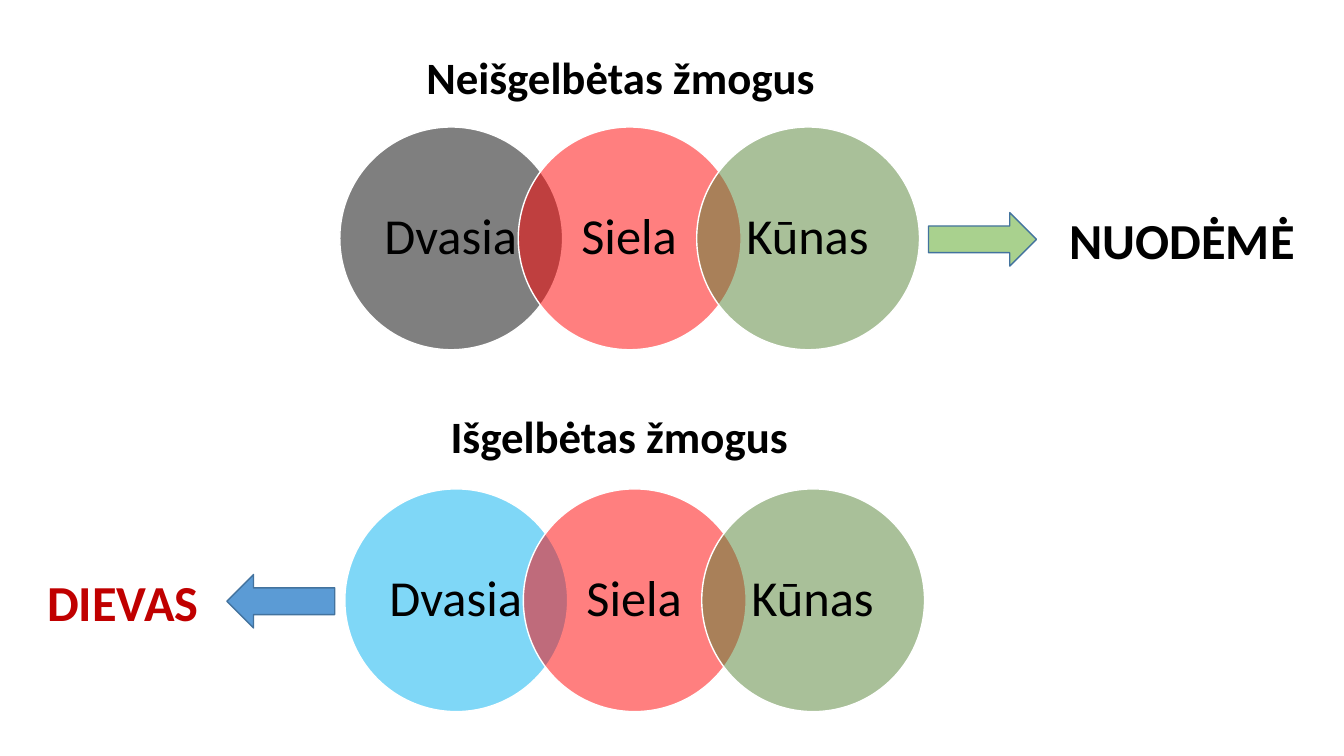
from lxml.etree import SubElement
from pptx import Presentation
from pptx.dml.color import RGBColor
from pptx.enum.shapes import MSO_SHAPE
from pptx.enum.text import MSO_ANCHOR, MSO_AUTO_SIZE, PP_ALIGN
from pptx.oxml.ns import qn
from pptx.util import Pt

EMU_PER_PX = 9144
COLORS = {
    "black": "000000",
    "white": "FFFFFF",
    "red": "FF0000",
    "green": "548235",
    "sky": "00B0F0",
    "dark red": "C00000",
    "light green": "A9D18E",
    "blue": "5B9BD5",
    "outline": "43739E",
}


def px(*lengths):
    return [length * EMU_PER_PX for length in lengths]


def color(name):
    return RGBColor.from_string(COLORS[name])


def add_filled_shape(shapes, preset, box, fill, line):
    shape = shapes.add_shape(preset, *px(*box))
    shape.shadow.inherit = False
    shape.fill.solid()
    shape.fill.fore_color.rgb = color(fill)
    shape.line.color.rgb = color(line)
    shape.line.width = Pt(1)
    return shape


def make_half_transparent(shape):
    fill_color = shape.fill._xPr.find(qn("a:solidFill"))[0]
    SubElement(fill_color, qn("a:alpha"), val="50000")


def add_text(shapes, box, text, size, text_color="black", bold=False):
    text_box = shapes.add_textbox(*px(*box))
    paragraph = text_box.text_frame.paragraphs[0]
    run = paragraph.add_run()
    run.text = text
    run.font.name = "Calibri"
    run.font.size = Pt(size)
    run.font.bold = bold
    run.font.color.rgb = color(text_color)
    return text_box.text_frame


def add_heading(shapes, box, text, size, text_color="black"):
    frame = add_text(shapes, box, text, size, text_color, bold=True)
    frame.word_wrap = False
    frame.auto_size = MSO_AUTO_SIZE.SHAPE_TO_FIT_TEXT


def add_circle_label(shapes, box, text):
    frame = add_text(shapes, box, text, 36)
    frame.word_wrap = True
    frame.vertical_anchor = MSO_ANCHOR.MIDDLE
    frame.margin_left, frame.margin_right = px(12, 12)
    paragraph = frame.paragraphs[0]
    paragraph.alignment = PP_ALIGN.CENTER
    paragraph.line_spacing = 0.9


def add_linked_circles(slide, box, spirit_color):
    left, top, width, diameter = box
    parts = [("Dvasia", spirit_color), ("Siela", "red"), ("Kūnas", "green")]
    pitch = (width - diameter) // (len(parts) - 1)
    label_size = 156
    inset = (diameter - label_size) // 2
    group = slide.shapes.add_group_shape()
    for index, (name, fill) in enumerate(parts):
        x = left + index * pitch
        circle_box = (x, top, diameter, diameter)
        circle = add_filled_shape(group.shapes, MSO_SHAPE.OVAL, circle_box, fill, "white")
        make_half_transparent(circle)
        label_box = (x + inset, top + inset, label_size, label_size)
        add_circle_label(group.shapes, label_box, name)


def add_unsaved_person(slide, left, top):
    shapes = slide.shapes
    add_linked_circles(slide, (left, top + 82, 575, 221), "black")
    add_heading(shapes, (left + 76, top, 409, 64), "Neišgelbėtas žmogus", 32)
    arrow_box = (left + 584, top + 167, 107, 53)
    add_filled_shape(shapes, MSO_SHAPE.RIGHT_ARROW, arrow_box, "light green", "outline")
    add_heading(shapes, (left + 714, top + 159, 246, 101), "NUODĖMĖ", 36)


def add_saved_person(slide, left, top):
    shapes = slide.shapes
    add_linked_circles(slide, (left, top + 84, 575, 221), "sky")
    add_heading(shapes, (left + 95, top, 358, 64), "Išgelbėtas žmogus", 32)
    arrow_box = (left - 117, top + 169, 107, 53)
    add_filled_shape(shapes, MSO_SHAPE.LEFT_ARROW, arrow_box, "blue", "outline")
    add_heading(shapes, (left - 305, top + 161, 172, 71), "DIEVAS", 36, "dark red")


def main():
    presentation = Presentation()
    presentation.slide_width, presentation.slide_height = px(1333, 750)
    slide = presentation.slides.add_slide(presentation.slide_layouts[6])
    add_unsaved_person(slide, 337, 44)
    add_saved_person(slide, 342, 401)
    presentation.save("out.pptx")


if __name__ == "__main__":
    main()
